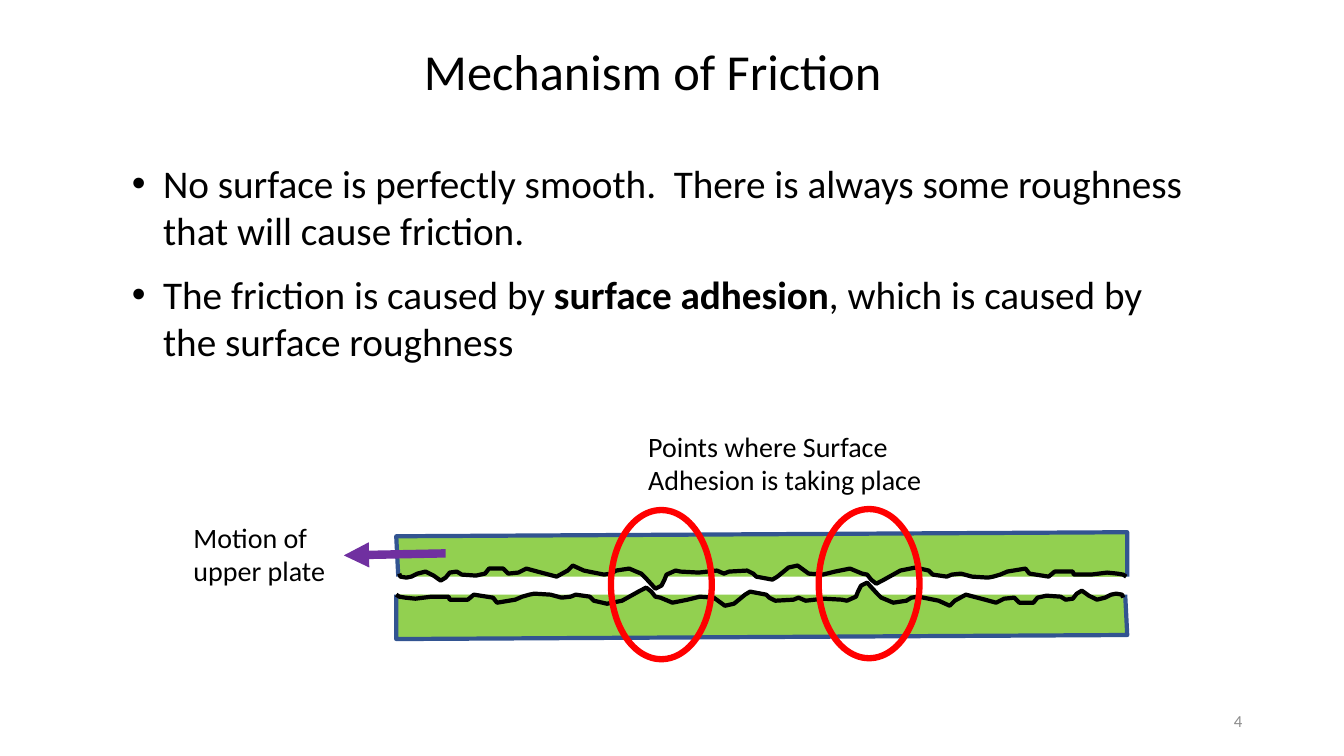
from lxml import etree
from pptx import Presentation
from pptx.dml.color import RGBColor
from pptx.enum import shapes, text
from pptx.oxml import ns
from pptx.util import Inches, Pt

COLORS = {
    "text": "000000", "page_number": "8C8C8C", "plate": "92D050",
    "plate_edge": "325491", "rough_edge": "000000",
    "contact": "FF0000", "motion": "7030A0",
}
LEFT, CENTER, RIGHT = text.PP_ALIGN.LEFT, text.PP_ALIGN.CENTER, text.PP_ALIGN.RIGHT

BULLETS = [
    [("No surface is perfectly smooth.  There is always some roughness "
      "that will cause friction.", False)],
    [("The friction is caused by ", False), ("surface adhesion", True),
     (", which is caused by the surface roughness", False)],
]

# Outlines of the lower plate; the upper plate is the same one turned by 180°.
PLATE = [(3.93, 5.9), (3.93, 6.34), (11.18, 6.3), (11.16, 5.9)]
ROUGH_EDGE = [
    (3.93, 5.9), (3.96, 5.92), (4.02, 5.93), (4.12, 5.94), (4.28, 5.92),
    (4.45, 5.92), (4.46, 5.95), (4.64, 5.95), (4.7, 5.9), (4.89, 5.93),
    (4.93, 5.98), (5.11, 5.95), (5.18, 5.92), (5.25, 5.9), (5.3, 5.89),
    (5.46, 5.9), (5.57, 5.93), (5.66, 5.92), (5.71, 5.9), (5.85, 5.92),
    (5.89, 5.96), (6.02, 5.99), (6.17, 5.96), (6.35, 5.86), (6.41, 5.83),
    (6.46, 5.87), (6.5, 5.92), (6.55, 5.93), (6.67, 5.98), (6.82, 5.95),
    (6.94, 5.92), (7.08, 5.93), (7.19, 6.01), (7.28, 5.99), (7.39, 5.9),
    (7.44, 5.87), (7.6, 5.9), (7.63, 5.93), (7.69, 5.96), (7.87, 5.95),
    (7.92, 5.93), (7.99, 5.96), (8.17, 5.94), (8.35, 5.95), (8.4, 5.96),
    (8.49, 5.92), (8.51, 5.87), (8.54, 5.81), (8.6, 5.78), (8.7, 5.89),
    (8.74, 5.93), (8.79, 5.95), (8.86, 5.98), (8.99, 5.96), (9.04, 5.93),
    (9.11, 5.92), (9.26, 5.95), (9.31, 5.96), (9.42, 6.01), (9.47, 5.96),
    (9.58, 5.9), (9.77, 5.95), (9.88, 5.98), (9.96, 5.94), (10.06, 5.93),
    (10.11, 5.98), (10.25, 5.98), (10.29, 5.93), (10.38, 5.91),
    (10.52, 5.92), (10.57, 5.95), (10.64, 5.94), (10.68, 5.89),
    (10.73, 5.86), (10.8, 5.91), (10.88, 5.95), (10.96, 5.93), (11.02, 5.9),
    (11.07, 5.89), (11.13, 5.9), (11.14, 5.93),
]


def rgb(name):
    return RGBColor.from_string(COLORS[name])


def place(sp, left, top, width, height):
    sp.left, sp.top = Inches(left), Inches(top)
    sp.width, sp.height = Inches(width), Inches(height)


def add_run(p, words, size=20, color="text", bold=False):
    r = p.add_run()
    r.text = words
    r.font.name, r.font.size, r.font.bold = "Calibri", Pt(size), bold
    r.font.color.rgb = rgb(color)


def set_text(sp, paragraphs, align=LEFT, anchor=text.MSO_ANCHOR.TOP,
             bullet=False, space_before=0, **font):
    """Fill a shape with paragraphs, each a list of (words, bold) runs."""
    tf = sp.text_frame
    tf.word_wrap = True
    tf.auto_size = text.MSO_AUTO_SIZE.NONE
    tf.vertical_anchor = anchor
    for i, runs in enumerate(paragraphs):
        p = tf.add_paragraph() if i else tf.paragraphs[0]
        p.alignment, p.space_before = align, Pt(space_before)
        for words, bold in runs:
            add_run(p, words, bold=bold, **font)
        if bullet:
            add_bullet(p)


def add_bullet(p, indent=0.31):
    pPr = p._p.get_or_add_pPr()
    pPr.set("marL", str(Inches(indent)))
    pPr.set("indent", str(-Inches(indent)))
    etree.SubElement(pPr, ns.qn("a:buFont")).set("typeface", "Arial")
    etree.SubElement(pPr, ns.qn("a:buChar")).set("char", "•")


def add_text(s, box, paragraphs, **fmt):
    sp = s.shapes.add_textbox(*map(Inches, box))
    set_text(sp, paragraphs, **fmt)


def add_outline(s, points, edge, turned_to=None):
    """Draw an open green outline, or turn it by 180° at a new left and top."""
    pts = [(Inches(x), Inches(y)) for x, y in points]
    builder = s.shapes.build_freeform(*pts[0])
    builder.add_line_segments(pts[1:], close=False)
    sp = builder.convert_to_shape()
    sp.shadow.inherit = False
    sp.fill.solid()
    sp.fill.fore_color.rgb = rgb("plate")
    sp.line.color.rgb, sp.line.width = rgb(edge), Pt(3)
    if turned_to:
        sp.left, sp.top = map(Inches, turned_to)
        sp.rotation = 180


def add_contact_ring(s, left, top):
    sp = s.shapes.add_shape(shapes.MSO_SHAPE.OVAL, Inches(left), Inches(top),
                            Inches(1), Inches(1.48))
    sp.shadow.inherit = False
    sp.fill.background()
    sp.line.color.rgb, sp.line.width = rgb("contact"), Pt(4.5)


def add_arrow(s, start, end):
    line = s.shapes.add_connector(shapes.MSO_CONNECTOR.STRAIGHT,
                                  *map(Inches, start + end))
    line.line.color.rgb, line.line.width = rgb("motion"), Pt(6)
    etree.SubElement(line.line._get_or_add_ln(), ns.qn("a:tailEnd")).set("type", "triangle")
    etree.SubElement(line._element.spPr, ns.qn("a:effectLst"))


def main():
    prs = Presentation()
    prs.slide_width, prs.slide_height = Inches(13.33), Inches(7.5)
    s = prs.slides.add_slide(prs.slide_layouts[5])

    place(s.shapes.title, 2.59, 0.35, 7.77, 0.71)
    set_text(s.shapes.title, [[("Mechanism of Friction", False)]],
             align=CENTER, size=36)
    add_text(s, (1.21, 1.53, 10.74, 2.15), BULLETS,
             bullet=True, space_before=12, size=28)

    add_outline(s, PLATE, "plate_edge")
    add_outline(s, ROUGH_EDGE, "rough_edge")
    add_outline(s, PLATE, "plate_edge", turned_to=(3.93, 5.28))
    add_outline(s, ROUGH_EDGE, "rough_edge", turned_to=(3.96, 5.61))

    add_contact_ring(s, 6.06, 5.06)
    add_contact_ring(s, 8.12, 5.05)
    add_text(s, (6.33, 4.21, 3.32, 0.77),
             [[("Points where Surface Adhesion is taking place", False)]])
    add_arrow(s, (4.42, 5.49), (3.41, 5.51))
    add_text(s, (1.82, 5.11, 1.66, 0.77), [[("Motion of upper plate", False)]])
    add_text(s, (9.42, 6.95, 3, 0.4), [[("4", False)]], align=RIGHT,
             anchor=text.MSO_ANCHOR.MIDDLE, size=12, color="page_number")

    prs.save("out.pptx")


if __name__ == "__main__":
    main()
